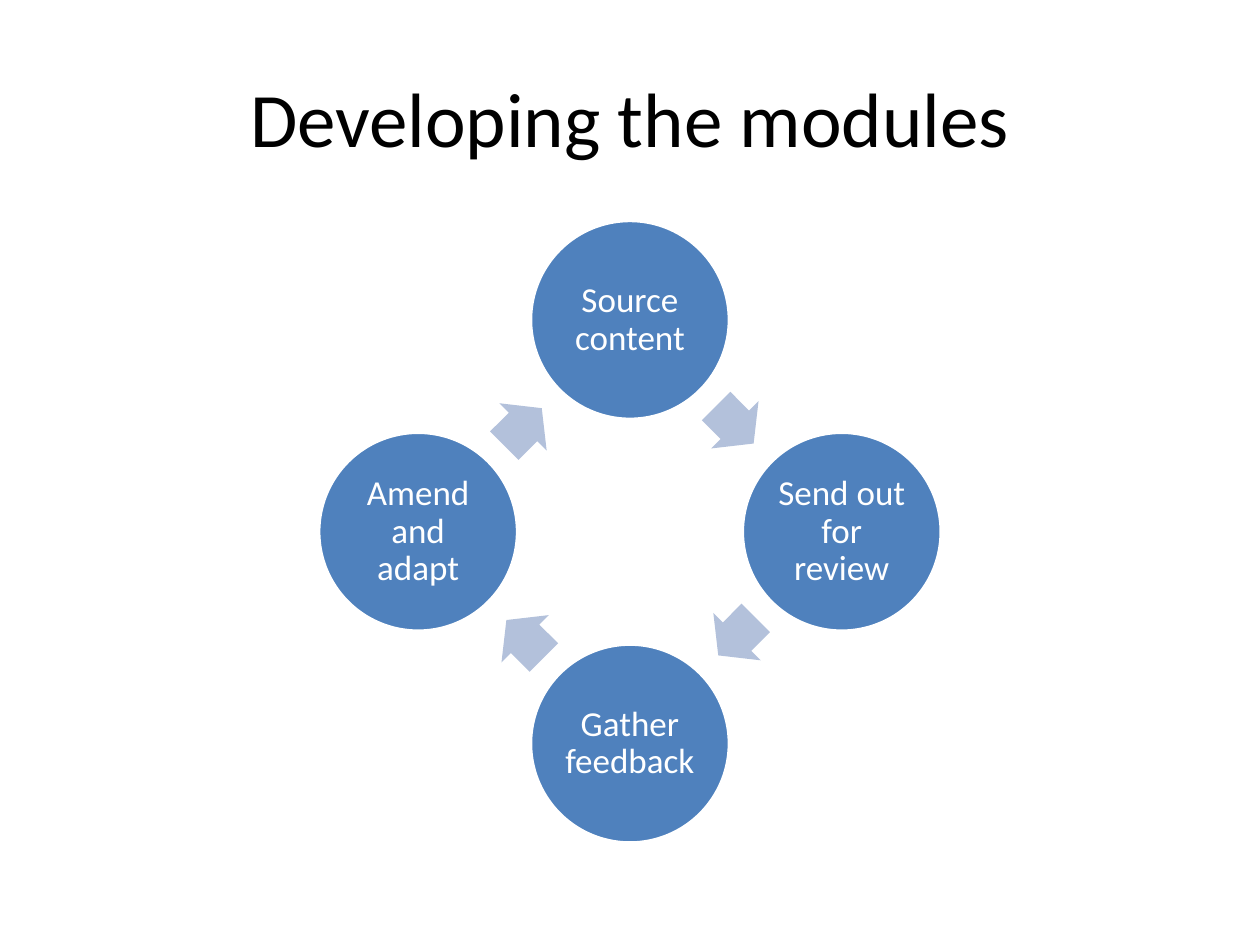
from math import cos, radians, sin

from pptx import Presentation
from pptx.dml.color import RGBColor
from pptx.enum.shapes import MSO_SHAPE
from pptx.enum.text import MSO_ANCHOR, PP_ALIGN
from pptx.util import Cm, Pt

CIRCLE, ARROW = MSO_SHAPE.OVAL, MSO_SHAPE.RIGHT_ARROW
CENTER, MIDDLE = PP_ALIGN.CENTER, MSO_ANCHOR.MIDDLE

# Content, clockwise from the top
TITLE = "Developing the modules"
STEPS = ["Source content", "Send out for review", "Gather feedback", "Amend and adapt"]

# Cycle geometry in cm
CENTER_X, CENTER_Y = 12.7, 10.72
RADIUS = 4.27
STEP_SIZE = 4.01
ARROW_LENGTH, ARROW_WIDTH = 1.07, 1.35
ARROW_SETBACK = 0.03
INSET = 0.08


def rgb(hex_color):
    return RGBColor.from_string(hex_color)


def format_text(frame, size, color):
    frame.word_wrap = True
    frame.vertical_anchor = MIDDLE
    paragraph = frame.paragraphs[0]
    paragraph.alignment = CENTER
    font = paragraph.runs[0].font
    font.name, font.size = "Calibri", Pt(size)
    font.color.rgb = rgb(color)


def add_centered(slide, kind, x, y, width, height, fill):
    shape = slide.shapes.add_shape(
        kind, Cm(x - width / 2), Cm(y - height / 2), Cm(width), Cm(height))
    shape.shadow.inherit = False
    shape.fill.solid()
    shape.fill.fore_color.rgb = rgb(fill)
    return shape


def add_step(slide, label, angle):
    x = CENTER_X + RADIUS * sin(angle)
    y = CENTER_Y - RADIUS * cos(angle)
    step = add_centered(slide, CIRCLE, x, y, STEP_SIZE, STEP_SIZE, "4F81BD")
    step.line.color.rgb = rgb("FFFFFF")
    step.line.width = Pt(2)
    frame = step.text_frame
    frame.margin_left = frame.margin_right = Cm(INSET)
    frame.margin_top = frame.margin_bottom = Cm(INSET)
    frame.text = label
    format_text(frame, 20, "FFFFFF")
    frame.paragraphs[0].line_spacing = 0.9


def add_arrow(slide, degrees):
    # Halfway along the chord between two steps, set back slightly
    angle = radians(degrees)
    chord_distance = RADIUS * cos(radians(45))
    x = CENTER_X + chord_distance * sin(angle) - ARROW_SETBACK * cos(angle)
    y = CENTER_Y - chord_distance * cos(angle) - ARROW_SETBACK * sin(angle)
    arrow = add_centered(slide, ARROW, x, y, ARROW_LENGTH, ARROW_WIDTH, "B3C1DB")
    arrow.line.fill.background()
    arrow.adjustments[0], arrow.adjustments[1] = 0.6, 0.5
    arrow.rotation = degrees


def main():
    prs = Presentation()
    prs.slide_width, prs.slide_height = Cm(25.4), Cm(19.05)
    slide = prs.slides.add_slide(prs.slide_layouts[5])

    # Title
    title = slide.shapes.title
    title.left, title.top = Cm(1.27), Cm(0.76)
    title.width, title.height = Cm(22.86), Cm(3.18)
    title.text_frame.text = TITLE
    format_text(title.text_frame, 44, "000000")

    # Cycle of steps, each followed by an arrow
    turn = 360 / len(STEPS)
    for index, label in enumerate(STEPS):
        add_step(slide, label, radians(index * turn))
        add_arrow(slide, (index + 0.5) * turn)

    prs.save("out.pptx")


if __name__ == "__main__":
    main()
